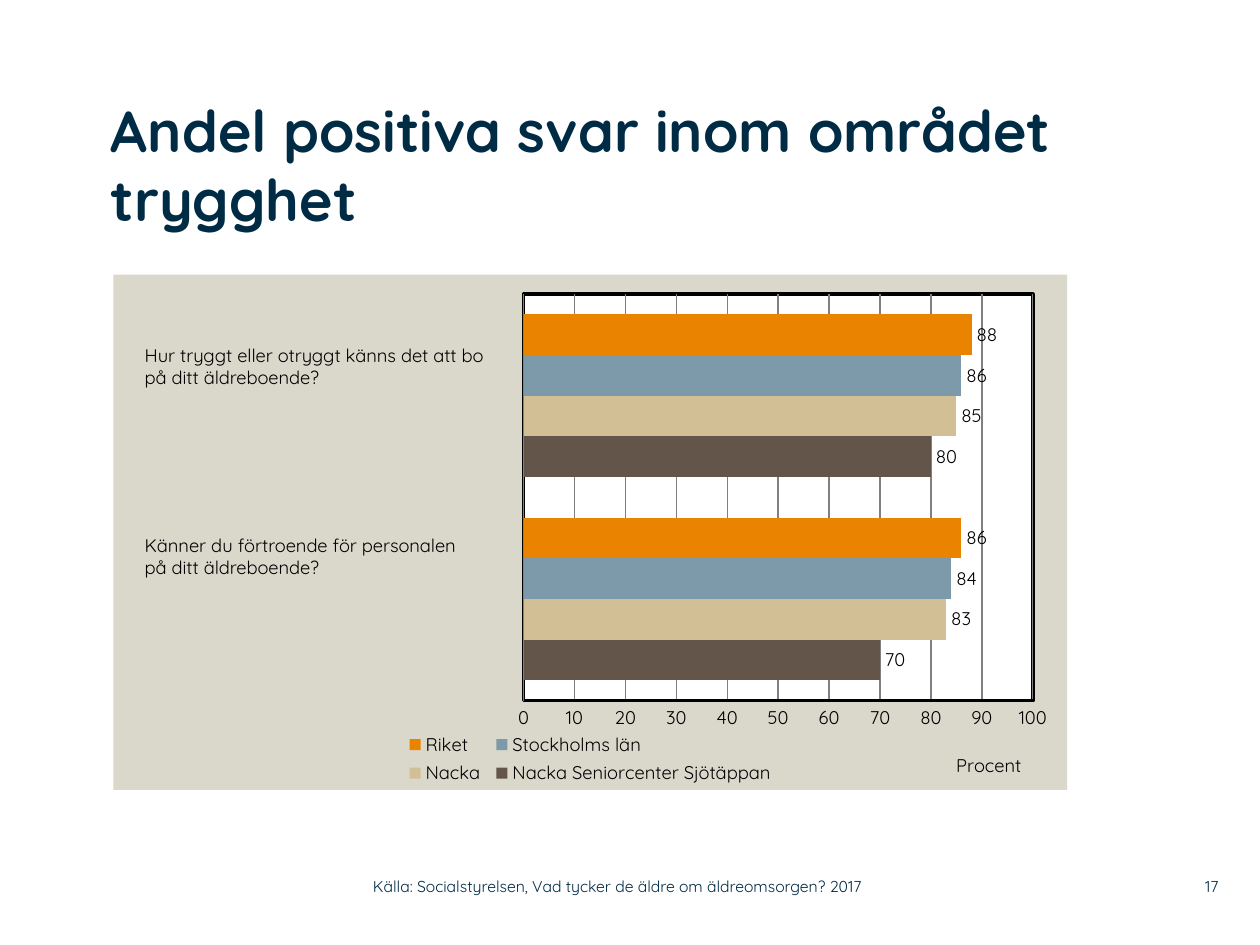
from lxml import etree
from pptx import Presentation
from pptx.chart.data import CategoryChartData
from pptx.dml.color import RGBColor
from pptx.enum.chart import XL_CHART_TYPE, XL_LABEL_POSITION, XL_LEGEND_POSITION, XL_TICK_MARK
from pptx.enum.text import MSO_ANCHOR, PP_ALIGN
from pptx.oxml import parse_xml
from pptx.oxml.ns import qn
from pptx.util import Inches, Pt

BAR_CLUSTERED = XL_CHART_TYPE.BAR_CLUSTERED
OUTSIDE_END = XL_LABEL_POSITION.OUTSIDE_END
LEGEND_BOTTOM = XL_LEGEND_POSITION.BOTTOM
NO_TICK = XL_TICK_MARK.NONE
TOP, MIDDLE = MSO_ANCHOR.TOP, MSO_ANCHOR.MIDDLE
LEFT, RIGHT = PP_ALIGN.LEFT, PP_ALIGN.RIGHT

FONT = "Quicksand"
NAVY, BLACK, WHITE = "002B45", "000000", "FFFFFF"
PANEL, GRID = "DAD7CB", "808080"
NAMESPACES = (
    'xmlns:c="http://schemas.openxmlformats.org/drawingml/2006/chart" '
    'xmlns:a="http://schemas.openxmlformats.org/drawingml/2006/main"'
)
SERIES = [
    ("Nacka Seniorcenter Sjötäppan", (70, 80), "635549"),
    ("Nacka", (83, 85), "D3BF96"),
    ("Stockholms län", (84, 86), "7D9AAA"),
    ("Riket", (86, 88), "E98300"),
]


def color(hex_value):
    return RGBColor.from_string(hex_value)


def style_font(font, size, hex_value, bold=False):
    font.name = FONT
    font.size = Pt(size)
    font.bold = bold
    font.color.rgb = color(hex_value)


def fill_text(shape, lines, size, hex_value, bold=False, align=LEFT, anchor=TOP, margins=(0, 0)):
    frame = shape.text_frame
    frame.word_wrap = True
    frame.vertical_anchor = anchor
    frame.margin_left = frame.margin_right = Inches(margins[0])
    frame.margin_top = frame.margin_bottom = Inches(margins[1])
    for index, line in enumerate(lines):
        paragraph = frame.add_paragraph() if index else frame.paragraphs[0]
        paragraph.alignment = align
        run = paragraph.add_run()
        run.text = line
        style_font(run.font, size, hex_value, bold)


def add_text(slide, box, lines, size, hex_value, **options):
    shape = slide.shapes.add_textbox(*map(Inches, box))
    fill_text(shape, lines, size, hex_value, **options)


def manual_layout(x, y, width=None, height=None, inner=False):
    layout = etree.Element(qn("c:layout"))
    manual = etree.SubElement(layout, qn("c:manualLayout"))
    entries = [("layoutTarget", "inner")] if inner else []
    entries += [("xMode", "edge"), ("yMode", "edge"), ("x", x), ("y", y)]
    if width is not None:
        entries += [("w", width), ("h", height)]
    for tag, value in entries:
        etree.SubElement(manual, qn(f"c:{tag}")).set("val", str(value))
    return layout


def set_layout(parent, layout, after=None):
    for old in parent.findall(qn("c:layout")):
        parent.remove(old)
    if after is None:
        parent.insert(0, layout)
    else:
        parent.find(qn(after)).addnext(layout)


def area_format(fill, line=""):
    outline = f'<a:ln w="{Pt(2)}"><a:solidFill><a:srgbClr val="{line}"/></a:solidFill></a:ln>'
    return parse_xml(
        f'<c:spPr {NAMESPACES}><a:solidFill><a:srgbClr val="{fill}"/></a:solidFill>'
        f'{outline if line else "<a:ln><a:noFill/></a:ln>"}</c:spPr>'
    )


def style_axes(chart):
    chart.category_axis.visible = False
    axis = chart.value_axis
    axis.minimum_scale, axis.maximum_scale, axis.major_unit = 0, 100, 10
    axis.major_tick_mark = axis.minor_tick_mark = NO_TICK
    axis.format.line.color.rgb = color(BLACK)
    axis.format.line.width = Pt(2)
    axis.has_major_gridlines = True
    axis.major_gridlines.format.line.color.rgb = color(GRID)
    axis.major_gridlines.format.line.width = Pt(0.75)
    style_font(axis.tick_labels.font, 10.5, BLACK)
    run = axis.axis_title.text_frame.paragraphs[0].add_run()
    run.text = "Procent"
    style_font(run.font, 10.5, BLACK)
    set_layout(axis.axis_title._element, manual_layout(0.88, 0.92), "c:tx")


def style_series(plot):
    plot.gap_width = 100
    plot.overlap = 0
    plot.vary_by_categories = False
    for series, (_, _, hex_value) in zip(plot.series, SERIES):
        series.format.fill.solid()
        series.format.fill.fore_color.rgb = color(hex_value)
        series.invert_if_negative = False
        labels = series.data_labels
        labels.show_value = True
        labels.position = OUTSIDE_END
        style_font(labels.font, 10.5, BLACK)


def add_safety_chart(slide, box):
    data = CategoryChartData()
    data.categories = ["1", "2"]
    for name, values, _ in SERIES:
        data.add_series(name, values)
    chart = slide.shapes.add_chart(BAR_CLUSTERED, *map(Inches, box), data).chart
    chart.has_title = False
    style_font(chart.font, 10.5, BLACK)
    style_axes(chart)
    style_series(chart.plots[0])

    # Legend below the bars
    chart.has_legend = True
    chart.legend.position = LEGEND_BOTTOM
    chart.legend.include_in_layout = False
    style_font(chart.legend.font, 10.5, BLACK)
    set_layout(chart.legend._element, manual_layout(0.3, 0.88, 0.4, 0.12), "c:legendPos")

    # Backgrounds and plot position
    chart_space = chart._chartSpace
    chart_space.find(qn("c:chart")).addnext(area_format(PANEL))
    plot_area = chart_space.find(".//" + qn("c:plotArea"))
    set_layout(plot_area, manual_layout(0.43, 0.038, 0.534, 0.789, inner=True))
    plot_area.append(area_format(WHITE, BLACK))


def add_title(slide, box):
    title = slide.shapes.title
    title.left, title.top, title.width, title.height = map(Inches, box)
    fill_text(title, ["Andel positiva svar inom området trygghet"], 33, NAVY, bold=True)


def add_questions(slide, box):
    left, top, width, height = box
    questions = [
        ["Hur tryggt eller otryggt känns det att bo på ditt äldreboende?"],
        ["Känner du förtroende för personalen", "på ditt äldreboende?"],
    ]
    for index, lines in enumerate(questions):
        position = (left, top + index * 1.51, width, height)
        add_text(slide, position, lines, 10.5, BLACK, margins=(0.1, 0.05))


def add_footer(slide, box):
    left, top, width, height = box
    source = ["Källa: Socialstyrelsen, Vad tycker de äldre om äldreomsorgen? 2017"]
    add_text(slide, (left, top, 4.43, height), source, 9, NAVY, anchor=MIDDLE)
    number_box = (left + width - 0.47, top, 0.47, height)
    add_text(slide, number_box, ["17"], 9, NAVY, align=RIGHT, anchor=MIDDLE)


def main():
    presentation = Presentation()
    presentation.slide_width, presentation.slide_height = Inches(10), Inches(7.5)
    slide = presentation.slides.add_slide(presentation.slide_layouts[5])
    add_safety_chart(slide, (0.9, 2.18, 7.57, 4.09))
    add_title(slide, (0.88, 0.75, 7.6, 1.42))
    add_questions(slide, (1.05, 2.68, 2.94, 0.45))
    add_footer(slide, (2.96, 6.89, 6.71, 0.29))
    presentation.save("out.pptx")


if __name__ == "__main__":
    main()
